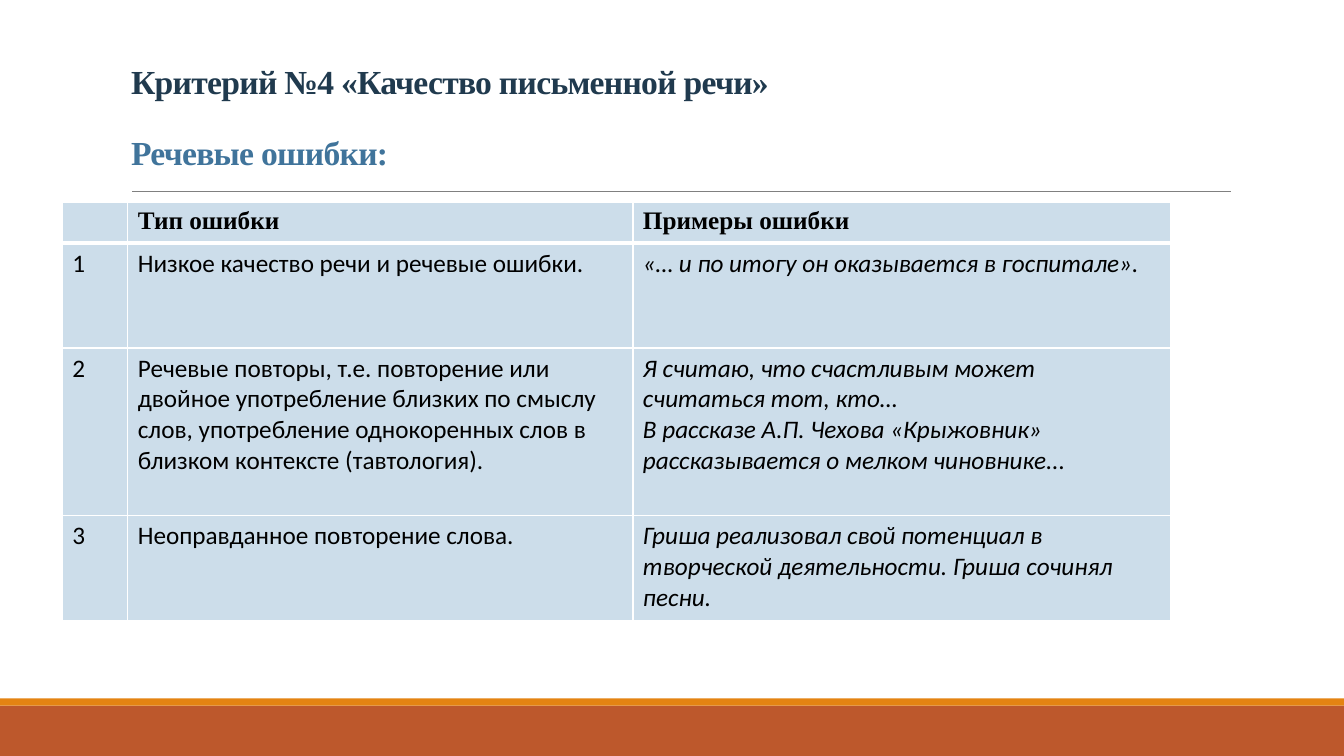
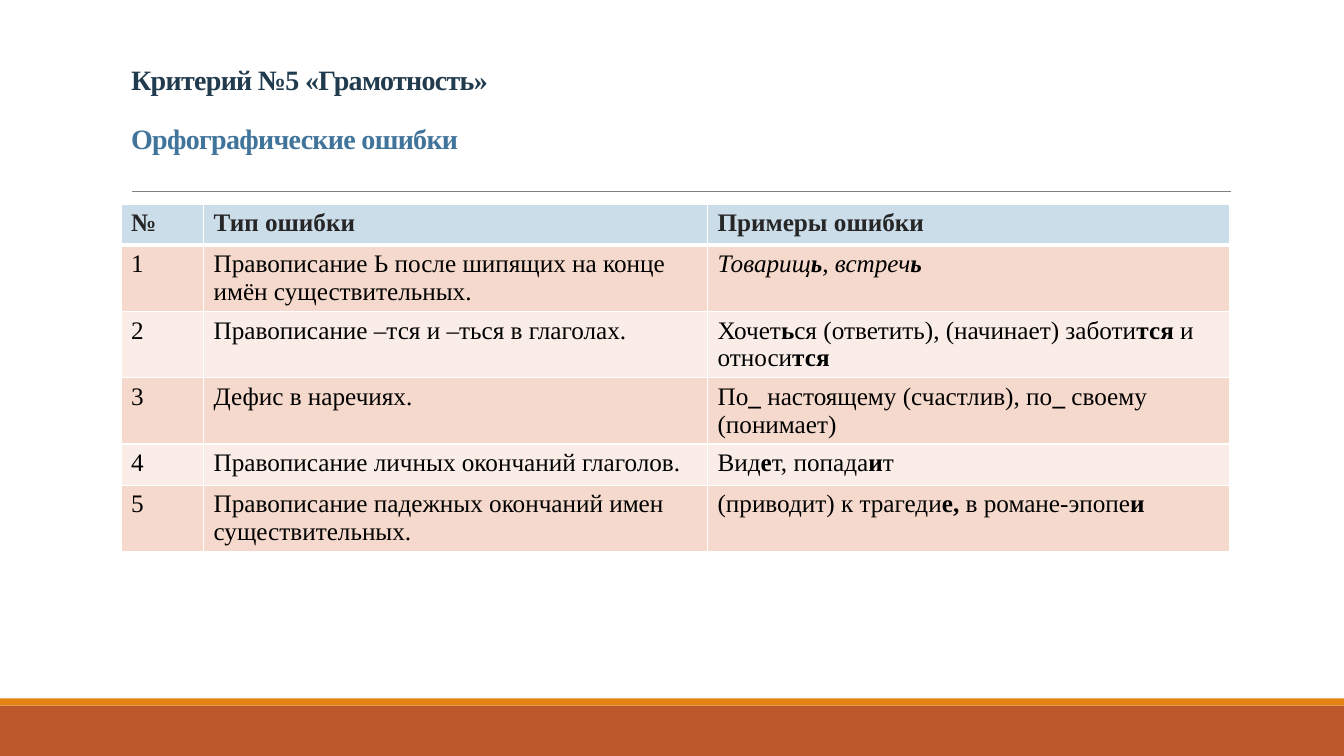
from itertools import cycle

from lxml import etree
from pptx import Presentation
from pptx.dml.color import RGBColor
from pptx.enum import shapes, text
from pptx.oxml import ns
from pptx.util import Cm, Pt

COLORS = {
    "heading": "203A4E", "subheading": "40749B",
    "band": "BD582C", "stripe": "E48312", "rule": "808080",
    "blue": "CCDDEA", "peach": "F5D9CC", "pale": "FAEDE7",
    "white": "FFFFFF", "black": "000000", "dark": "262626",
}
SERIF, SANS = "Times New Roman", "Calibri"
SLIDE_WIDTH, SLIDE_HEIGHT = 33.87, 19.05
TITLE_ONLY = 5

SPEECH_ROWS = [
    ("", "Тип ошибки", "Примеры ошибки"),
    ("1", "Низкое качество речи и речевые ошибки.",
     "«… и по итогу он оказывается в госпитале»."),
    ("2", "Речевые повторы, т.е. повторение или двойное употребление близких "
          "по смыслу слов, употребление однокоренных слов в близком контексте "
          "(тавтология).",
     "Я считаю, что счастливым может считаться тот, кто…\n"
     "В рассказе А.П. Чехова «Крыжовник» рассказывается о мелком чиновнике..."),
    ("3", "Неоправданное повторение слова.",
     "Гриша реализовал свой потенциал в творческой деятельности. "
     "Гриша сочинял песни."),
]
# Asterisks enclose bold letters
SPELLING_ROWS = [
    ("№", "Тип ошибки", "Примеры ошибки"),
    ("1", "Правописание Ь после шипящих на конце имён существительных.",
     "Товарищ*ь*, встреч*ь*"),
    ("2", "Правописание –тся и –ться в глаголах.",
     "Хочет*ь*ся (ответить), (начинает) заботи*тся* и относи*тся*"),
    ("3", "Дефис в наречиях.",
     "По*_* настоящему (счастлив), по*_* своему (понимает)"),
    ("4", "Правописание личных окончаний глаголов.", "Вид*е*т, попада*и*т"),
    ("5", "Правописание падежных окончаний имен существительных.",
     "(приводит) к трагеди*е, *в романе-эпопе*и*"),
]


def rgb(name):
    return RGBColor.from_string(COLORS[name])


def set_font(font, name, size, color, bold=False, italic=False):
    font.name, font.size = name, Pt(size)
    font.bold, font.italic = bold, italic
    font.color.rgb = rgb(color)


def add_band(slide, top, height, color):
    band = slide.shapes.add_shape(shapes.MSO_SHAPE.RECTANGLE, 0, Cm(top),
                                  Cm(SLIDE_WIDTH), Cm(height))
    band.shadow.inherit = False
    band.fill.solid()
    band.fill.fore_color.rgb = rgb(color)
    band.line.fill.background()


def add_rule(slide, left, right, top):
    rule = slide.shapes.add_connector(shapes.MSO_CONNECTOR.STRAIGHT,
                                      Cm(left), Cm(top), Cm(right), Cm(top))
    rule.line.color.rgb = rgb("rule")
    rule.line.width = Pt(0.5)
    etree.SubElement(rule.element.spPr, ns.qn("a:effectLst"))


def set_title(slide, heading, subheading, size):
    title = slide.shapes.title
    title.left, title.top, title.width, title.height = (
        Cm(3.05), Cm(1.57), Cm(27.94), Cm(3.1))
    frame = title.text_frame
    frame.auto_size = text.MSO_AUTO_SIZE.NONE
    frame.vertical_anchor = text.MSO_ANCHOR.TOP
    frame.text = f"{heading}\n{subheading}"
    for paragraph, color in zip(frame.paragraphs, ("heading", "subheading")):
        paragraph.alignment = text.PP_ALIGN.LEFT
        paragraph.line_spacing = 0.85
        set_font(paragraph.font, SERIF, size, color, bold=True)
        paragraph._p.pPr.find(ns.qn("a:defRPr")).set("spc", "-50")
    frame.paragraphs[1].space_before = Pt(round(size * 1.08))


def add_slide(presentation, heading, subheading, title_size):
    slide = presentation.slides.add_slide(
        presentation.slide_layouts[TITLE_ONLY])
    add_band(slide, 17.78, 1.27, "band")
    add_band(slide, 17.6, 0.18, "stripe")
    add_rule(slide, 3.33, 31.01, 4.83)
    set_title(slide, heading, subheading, title_size)
    return slide


def set_borders(cell, bottom_width):
    properties = cell._tc.get_or_add_tcPr()
    for side, width in (("L", 1), ("R", 1), ("T", 1), ("B", bottom_width)):
        line = etree.SubElement(properties, ns.qn(f"a:ln{side}"),
                                w=str(Pt(width)))
        fill = etree.SubElement(line, ns.qn("a:solidFill"))
        etree.SubElement(fill, ns.qn("a:srgbClr"), val=COLORS["white"])


def fill_cell(cell, content, fill, font):
    """Write the content, with the parts between asterisks in bold."""
    frame = cell.text_frame
    for index, line in enumerate(content.split("\n")):
        paragraph = frame.add_paragraph() if index else frame.paragraphs[0]
        set_font(paragraph.font, **font)
        for part_index, part in enumerate(line.split("*")):
            if part:
                run = paragraph.add_run()
                run.text = part
                if part_index % 2:
                    run.font.bold = True
    cell.fill.solid()
    cell.fill.fore_color.rgb = rgb(fill)


def add_error_table(slide, rows, left, top, widths, heights, body_fills,
                    body_font, header_color, italic_rows):
    table = slide.shapes.add_table(
        len(rows), len(widths), Cm(left), Cm(top),
        Cm(sum(widths)), Cm(sum(heights))).table
    for column, width in zip(table.columns, widths):
        column.width = Cm(width)
    fills = cycle(body_fills)
    for row_index, (values, height) in enumerate(zip(rows, heights)):
        table.rows[row_index].height = Cm(height)
        header = row_index == 0
        fill = "blue" if header else next(fills)
        for column_index, content in enumerate(values):
            cell = table.cell(row_index, column_index)
            set_borders(cell, 3 if header else 1)
            font = {
                "name": SERIF if header else body_font,
                "size": 18,
                "color": header_color if header else "black",
                "bold": header,
                "italic": column_index == 2 and row_index in italic_rows,
            }
            fill_cell(cell, content, fill, font)


def main():
    presentation = Presentation()
    presentation.slide_width = Cm(SLIDE_WIDTH)
    presentation.slide_height = Cm(SLIDE_HEIGHT)

    # Speech errors
    slide = add_slide(presentation, "Критерий №4 «Качество письменной речи»",
                      "Речевые ошибки:", 24)
    add_error_table(slide, SPEECH_ROWS, 1.57, 5.09, (1.65, 12.73, 13.56),
                    (1.04, 2.64, 4.22, 2.64), ("blue",), SANS, "black",
                    italic_rows=(1, 2, 3))

    # Spelling errors
    slide = add_slide(presentation, "Критерий №5 «Грамотность»",
                      "Орфографические ошибки", 20)
    one_line, two_lines = 1.04, 1.67
    add_error_table(slide, SPELLING_ROWS, 3.05, 5.14, (2.08, 12.7, 13.16),
                    (one_line, two_lines, two_lines, two_lines, one_line,
                     two_lines), ("peach", "pale"), SERIF, "dark",
                    italic_rows=(1,))

    presentation.save("out.pptx")


if __name__ == "__main__":
    main()
